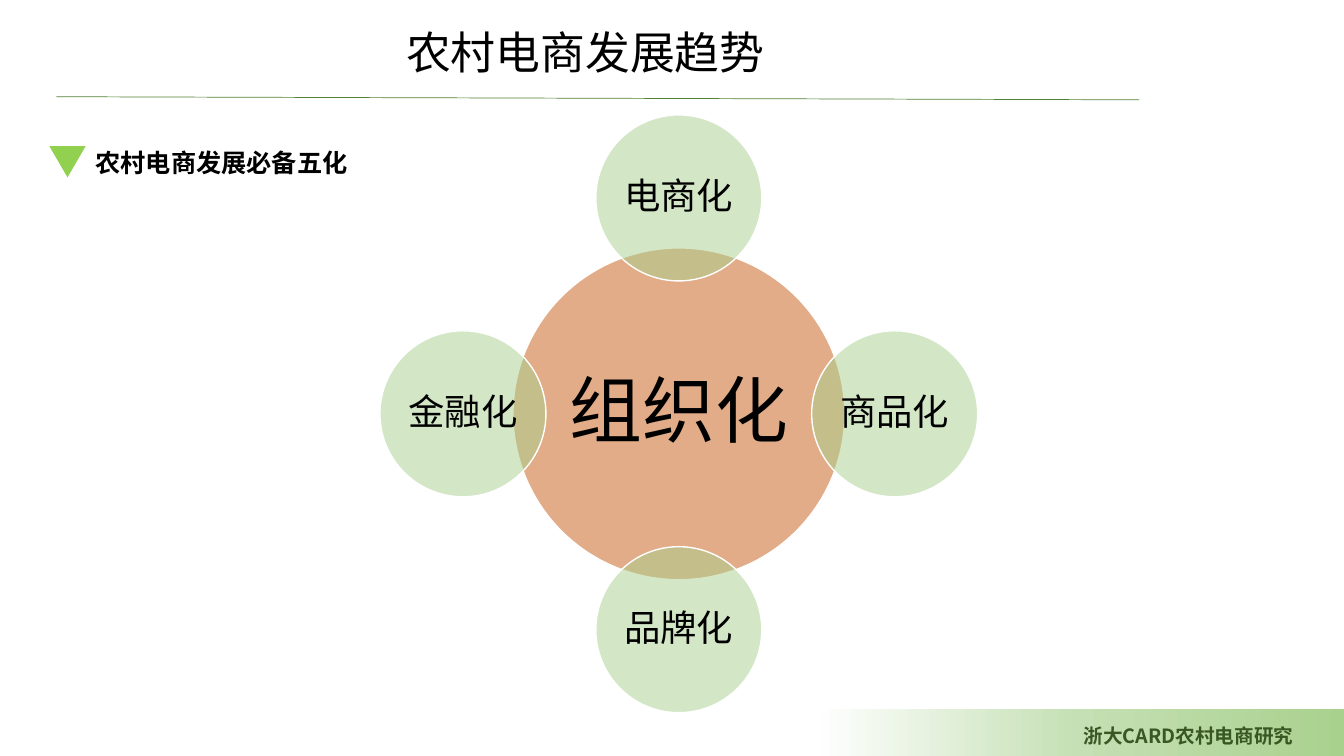
from copy import deepcopy

from lxml import etree
from pptx import Presentation
from pptx.dml.color import RGBColor
from pptx.enum.shapes import MSO_CONNECTOR, MSO_SHAPE
from pptx.enum.text import MSO_ANCHOR, PP_ALIGN
from pptx.oxml.ns import qn
from pptx.util import Pt

LINE = MSO_CONNECTOR.STRAIGHT
ELLIPSE, RECTANGLE = MSO_SHAPE.OVAL, MSO_SHAPE.RECTANGLE
TRIANGLE = MSO_SHAPE.FLOWCHART_MERGE
MIDDLE = MSO_ANCHOR.MIDDLE
LEFT, CENTER, JUSTIFY = PP_ALIGN.LEFT, PP_ALIGN.CENTER, PP_ALIGN.JUSTIFY

FONT = "Noto Sans CJK SC"
BLACK = RGBColor(0x00, 0x00, 0x00)
WHITE = RGBColor(0xFF, 0xFF, 0xFF)
DARK_GREEN = RGBColor(0x38, 0x57, 0x23)
RULE_GREEN = RGBColor(0x54, 0x82, 0x35)
SOFT_GREEN = RGBColor(0xA9, 0xD1, 0x8E)
PALE_GREEN = RGBColor(0xC5, 0xE0, 0xB4)
BRIGHT_GREEN = RGBColor(0x92, 0xD0, 0x50)
ORANGE = RGBColor(0xC5, 0x5A, 0x11)

HUB_X, HUB_Y = 484.9, 295.6
HUB_SIZE, SATELLITE_SIZE = 237, 118.6
ORBIT = 154.2
SATELLITES = [("电商化", 0, -1), ("商品化", 1, 0), ("品牌化", 0, 1), ("金融化", -1, 0)]


def write_text(box, text, size, align, color=BLACK, bold=False):
    para = box.text_frame.paragraphs[0]
    para.alignment = align
    span = para.add_run()
    span.text = text
    span.font.color.rgb = color
    for name, value in {"name": FONT, "size": Pt(size), "bold": bold}.items():
        setattr(span.font, name, value)
    latin = span.font._element.find(qn("a:latin"))
    east_asian = etree.Element(qn("a:ea"), typeface=FONT)
    latin.addnext(east_asian)
    return para


def add_label(page, text, left, top, width, height, size, align,
              color=BLACK, bold=False, wrap=True):
    box = page.shapes.add_textbox(Pt(left), Pt(top), Pt(width), Pt(height))
    box.text_frame.word_wrap = wrap
    write_text(box, text, size, align, color, bold)


def add_plain_shape(page, kind, left, top, width, height):
    """Add a shape with neither shadow nor outline."""
    shape = page.shapes.add_shape(kind, Pt(left), Pt(top), Pt(width), Pt(height))
    shape.shadow.inherit = False
    shape.line.fill.background()
    return shape


def add_circle(page, text, center_x, center_y, diameter, color, size):
    """Add a half-transparent circle, placed by its centre, with a label."""
    circle = add_plain_shape(page, ELLIPSE, center_x - diameter / 2,
                             center_y - diameter / 2, diameter, diameter)
    circle.fill.solid()
    circle.fill.fore_color.rgb = color
    tint = circle._element.spPr.find(qn("a:solidFill"))[0]
    etree.SubElement(tint, qn("a:alpha"), val="50000")
    circle.line.color.rgb = WHITE
    circle.line.width = Pt(1)
    frame_format = {"margin_left": 0, "margin_right": 0, "margin_top": 0,
                    "margin_bottom": 0, "vertical_anchor": MIDDLE, "word_wrap": True}
    for name, value in frame_format.items():
        setattr(circle.text_frame, name, value)
    write_text(circle, text, size, CENTER).line_spacing = 0.9


def add_footer(page):
    band = add_plain_shape(page, RECTANGLE, 581.8, 506.2, 378.2, 33.8)
    band.fill.gradient()
    band.fill.gradient_angle = 0
    stop_list = band._element.spPr.find(".//" + qn("a:gsLst"))
    stop_list.append(deepcopy(stop_list[-1]))
    stops = [(0, WHITE), (0.5, PALE_GREEN), (1, SOFT_GREEN)]
    for stop, (position, color) in zip(band.fill.gradient_stops, stops):
        stop.position = position
        stop.color.rgb = color
    add_label(page, "浙大CARD农村电商研究", 766.8, 513.4, 193.2, 24.5, 14,
              JUSTIFY, DARK_GREEN, True)


def add_title_rule(page):
    rule = page.shapes.add_connector(LINE, Pt(40.3), Pt(69.1), Pt(813.6), Pt(71.3))
    rule.line.color.rgb = RULE_GREEN
    rule.line.width = Pt(0.5)
    etree.SubElement(rule._element.spPr, qn("a:effectLst"))


def add_heading(page):
    marker = add_plain_shape(page, TRIANGLE, 35.3, 104.4, 25.9, 22.3)
    marker.fill.solid()
    marker.fill.fore_color.rgb = BRIGHT_GREEN
    add_label(page, "农村电商发展必备五化", 61.2, 101.5, 196.6, 28.8, 18,
              LEFT, bold=True, wrap=False)


def main():
    deck = Presentation()
    deck.slide_width, deck.slide_height = Pt(960), Pt(540)
    page = deck.slides.add_slide(deck.slide_layouts[6])
    add_footer(page)
    add_title_rule(page)
    add_heading(page)
    add_label(page, "农村电商发展趋势", 283, 14.4, 429.8, 46.1, 32, JUSTIFY)
    add_circle(page, "组织化", HUB_X, HUB_Y, HUB_SIZE, ORANGE, 52)
    for text, across, down in SATELLITES:
        add_circle(page, text, HUB_X + across * ORBIT, HUB_Y + down * ORBIT,
                   SATELLITE_SIZE, SOFT_GREEN, 26)
    deck.save("out.pptx")


if __name__ == "__main__":
    main()
